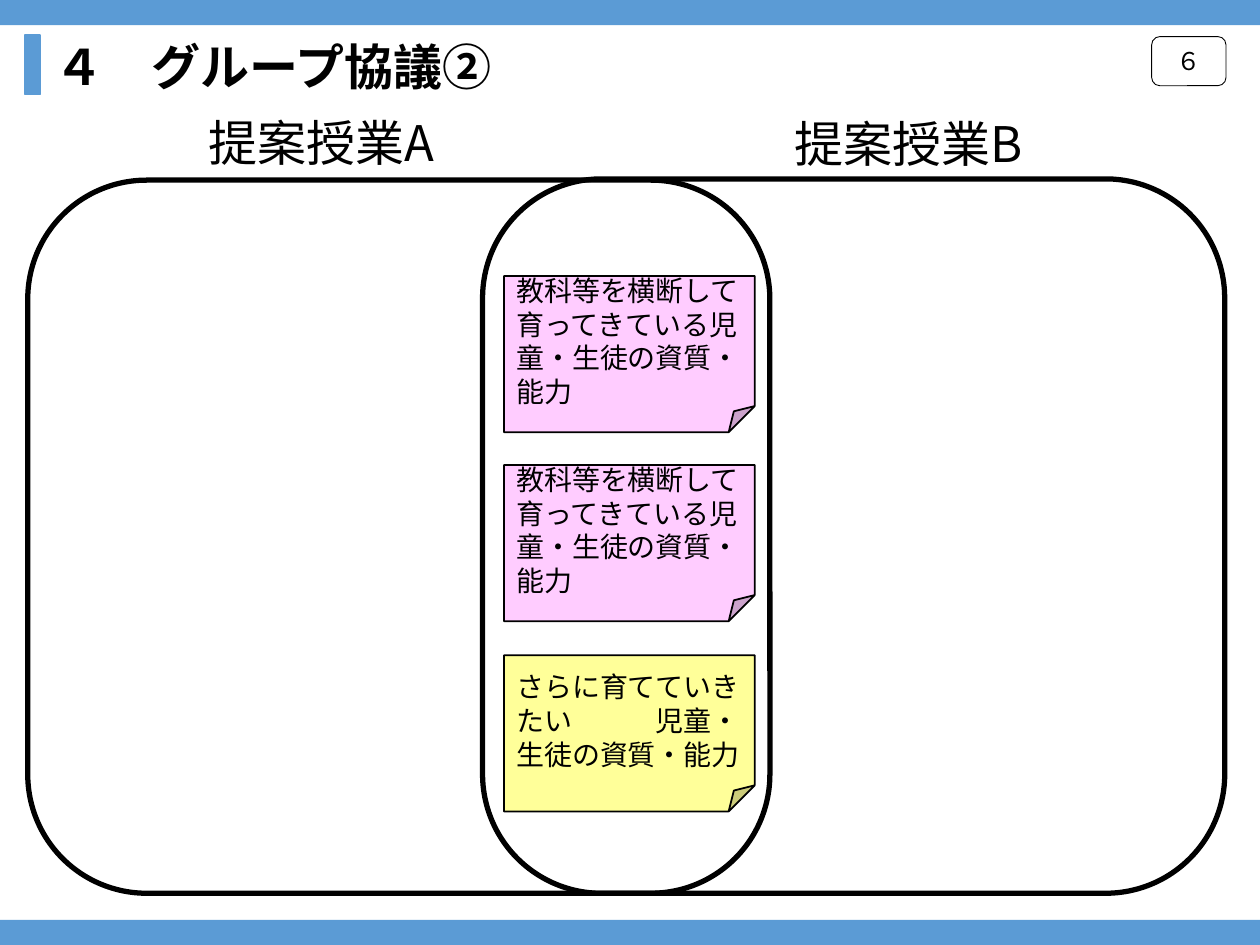
"""Build the group discussion slide: two overlapping lesson frames with sticky notes."""
from dataclasses import dataclass
from typing import Optional

from lxml import etree
from pptx import Presentation
from pptx import util as u
from pptx.dml.color import RGBColor
from pptx.enum import shapes, text
from pptx.oxml import ns

FONT = "Noto Sans CJK JP"
BLACK = RGBColor(0x00, 0x00, 0x00)
WHITE = RGBColor(0xFF, 0xFF, 0xFF)
BLUE = RGBColor(0x5B, 0x9B, 0xD5)
PINK = RGBColor(0xFF, 0xCC, 0xFF)
YELLOW = RGBColor(0xFF, 0xFF, 0x99)
COLUMNS, ROWS = 40, 30
WIDTH, HEIGHT = u.Inches(10), u.Inches(7.5)
RECT = shapes.MSO_SHAPE.RECTANGLE
ROUND = shapes.MSO_SHAPE.ROUNDED_RECTANGLE
NOTE = shapes.MSO_SHAPE.FOLDED_CORNER
LEFT, CENTER = text.PP_ALIGN.LEFT, text.PP_ALIGN.CENTER
TOP, MIDDLE = text.MSO_ANCHOR.TOP, text.MSO_ANCHOR.MIDDLE


@dataclass(frozen=True)
class Area:
    column: float
    row: float
    columns: float
    rows: float

    def bounds(self) -> dict:
        return {
            "left": round(WIDTH * self.column / COLUMNS),
            "top": round(HEIGHT * self.row / ROWS),
            "width": round(WIDTH * self.columns / COLUMNS),
            "height": round(HEIGHT * self.rows / ROWS),
        }


@dataclass(frozen=True)
class Words:
    lines: tuple
    size: float
    align: int = LEFT
    anchor: int = MIDDLE
    bold: bool = False


@dataclass(frozen=True)
class Block:
    kind: int
    area: Area
    fill: Optional[RGBColor] = None
    line: Optional[RGBColor] = None
    weight: float = 1
    words: Optional[Words] = None


def set_all(target, values: dict) -> None:
    """Set every attribute named in values."""
    for name, value in values.items():
        setattr(target, name, value)


def write(box, words: Words) -> None:
    """Write formatted paragraphs into a shape."""
    frame = box.text_frame
    set_all(frame, {"word_wrap": True, "vertical_anchor": words.anchor,
                    "auto_size": text.MSO_AUTO_SIZE.NONE})
    for index, line in enumerate(words.lines):
        para = frame.add_paragraph() if index else frame.paragraphs[0]
        para.alignment = words.align
        span = para.add_run()
        span.text = line
        set_all(span.font, {"name": FONT, "size": u.Pt(words.size), "bold": words.bold})
        span.font.color.rgb = BLACK
        etree.SubElement(span.font._element, ns.qn("a:ea"), typeface=FONT)


def draw_block(page, block: Block) -> None:
    """Draw one preset shape with its optional fill, outline and words."""
    box = page.shapes.add_shape(block.kind, **block.area.bounds())
    box.shadow.inherit = False
    if block.fill is None:
        box.fill.background()
    else:
        box.fill.solid()
        box.fill.fore_color.rgb = block.fill
    if block.line is None:
        box.line.fill.background()
    else:
        box.line.color.rgb = block.line
        box.line.width = u.Pt(block.weight)
    if block.words:
        write(box, block.words)


def draw_label(page, area: Area, label: str) -> None:
    """Draw a centred lesson label."""
    box = page.shapes.add_textbox(**area.bounds())
    write(box, Words((label,), 28, CENTER, TOP))


def draw_title(page, area: Area, title: str) -> None:
    """Move and format the title placeholder."""
    box = page.shapes.title
    set_all(box, area.bounds())
    write(box, Words((title,), 28, LEFT, TOP, True))


def note(row: float, fill: RGBColor, *lines: str) -> Block:
    """Describe a sticky note in the shared middle column."""
    return Block(NOTE, Area(16, row, 7.96, 4.96), fill, BLACK, 1, Words(lines, 16))


GROWN = ("教科等を横断して", "育ってきている児童・生徒の資質・能力")
BARS = [Block(RECT, Area(0, row, COLUMNS, 0.8), BLUE) for row in (ROWS - 0.8, 0)]
FRAMES = [
    Block(ROUND, Area(15.32, 5.68, 23.56, 22.68), line=BLACK, weight=3),
    Block(ROUND, Area(0.88, 5.72, 23.56, 22.64), line=BLACK, weight=3),
]
NOTES = [
    note(8.76, PINK, *GROWN),
    note(14.76, PINK, *GROWN),
    note(20.8, YELLOW, "さらに育てていきたい\u3000\u3000\u3000児童・生徒の資質・能力".replace("\u3000", "　")),
]
MARKS = [
    Block(ROUND, Area(36.56, 1.16, 2.36, 1.56), WHITE, BLACK, 0.5, Words(("６",), 14, CENTER)),
    Block(RECT, Area(0.8, 1.12, 0.48, 1.88), BLUE, BLUE),
]


def main() -> None:
    """Assemble and save the deck."""
    deck = Presentation()
    set_all(deck, {"slide_width": WIDTH, "slide_height": HEIGHT})
    page = deck.slides.add_slide(deck.slide_layouts[5])
    draw_title(page, Area(1.32, 0.96, 31.88, 2.28), "４　グループ協議②")
    for block in BARS + FRAMES + NOTES + MARKS:
        draw_block(page, block)
    draw_label(page, Area(6.12, 3.36, 8.16, 2.28), "提案授業A")
    draw_label(page, Area(24.76, 3.4, 8.16, 2.28), "提案授業B")
    deck.save("out.pptx")


if __name__ == "__main__":
    main()
